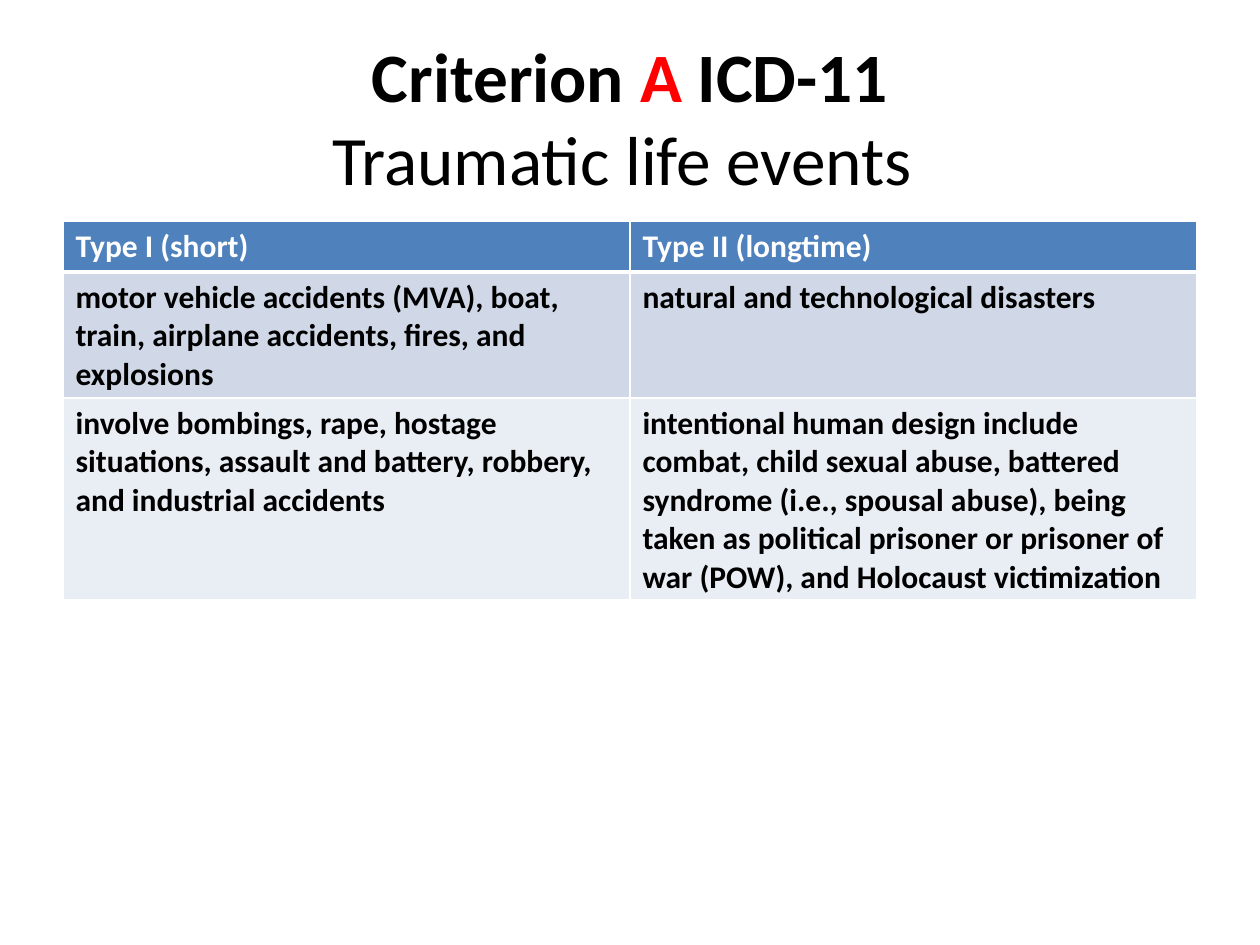
from dataclasses import dataclass

from lxml.etree import SubElement
from pptx import Presentation
from pptx.dml.color import RGBColor
from pptx.enum.text import MSO_ANCHOR, PP_ALIGN
from pptx.oxml.ns import qn
from pptx.util import Emu, Pt

EMU_PER_PX = 914400 // 126


@dataclass(frozen=True)
class Theme:
    font: str = "Calibri"
    title_size: float = 39.6
    table_size: float = 18
    ink: str = "000000"
    accent: str = "FF0000"
    paper: str = "FFFFFF"
    header_fill: str = "4F81BD"
    grid_width: int = 1
    header_rule_width: int = 3


@dataclass(frozen=True)
class Span:
    text: str
    color: str
    bold: bool = True


@dataclass(frozen=True)
class EventRow:
    short: str
    longtime: str
    fill: str
    height: int
    color: str = "000000"
    bottom_rule: int = 1


THEME = Theme()

TITLE_LINES = [
    [Span("Criterion ", THEME.ink), Span("A", THEME.accent), Span(" ICD-11", THEME.ink)],
    [Span("Traumatic life events ", THEME.ink, bold=False)],
]

EVENT_ROWS = [
    EventRow("Type I (short)", "Type II (longtime)", THEME.header_fill, 51,
             THEME.paper, THEME.header_rule_width),
    EventRow("motor vehicle accidents (MVA), boat, train, airplane accidents, "
             "fires, and explosions",
             "natural and technological disasters", "D0D8E8", 126),
    EventRow("involve bombings, rape, hostage situations, assault and battery, "
             "robbery, and industrial accidents",
             "intentional human design include combat, child sexual abuse, "
             "battered syndrome (i.e., spousal abuse), being taken as political "
             "prisoner or prisoner of war (POW), and Holocaust victimization",
             "E9EDF4", 202),
]


def px(length: int) -> Emu:
    return Emu(length * EMU_PER_PX)


def style_run(run, size: float, color: str, bold: bool) -> None:
    run.font.name = THEME.font
    run.font.size = Pt(size)
    run.font.bold = bold
    run.font.color.rgb = RGBColor.from_string(color)


def draw_title(page, lines: list[list[Span]]) -> None:
    box = page.shapes.add_textbox(px(63), px(38), px(1134), px(157))
    frame = box.text_frame
    frame.word_wrap = True
    frame.vertical_anchor = MSO_ANCHOR.MIDDLE
    para = frame.paragraphs[0]
    para.alignment = PP_ALIGN.CENTER
    for index, line in enumerate(lines):
        if index:
            para.add_line_break()
        for span in line:
            run = para.add_run()
            run.text = span.text
            style_run(run, THEME.title_size, span.color, span.bold)


def add_borders(cell, top: int, bottom: int) -> None:
    """Rule all four sides of a cell; the widths are in points."""
    properties = cell._tc.get_or_add_tcPr()
    widths = {"L": THEME.grid_width, "R": THEME.grid_width, "T": top, "B": bottom}
    for position, (side, width) in enumerate(widths.items()):
        line = SubElement(properties, qn(f"a:ln{side}"), w=str(Pt(width)))
        fill = SubElement(line, qn("a:solidFill"))
        SubElement(fill, qn("a:srgbClr"), val=THEME.paper)
        properties.insert(position, line)  # borders precede the cell fill


def draw_events(page, rows: list[EventRow]) -> None:
    height = sum(row.height for row in rows)
    table = page.shapes.add_table(len(rows), 2, px(63), px(221), px(1134), px(height)).table
    top_rule = THEME.grid_width
    for index, row in enumerate(rows):
        table.rows[index].height = px(row.height)
        for column, text in enumerate((row.short, row.longtime)):
            cell = table.cell(index, column)
            cell.text_frame.text = text
            style_run(cell.text_frame.paragraphs[0].runs[0],
                      THEME.table_size, row.color, True)
            cell.fill.solid()
            cell.fill.fore_color.rgb = RGBColor.from_string(row.fill)
            add_borders(cell, top_rule, row.bottom_rule)
        top_rule = row.bottom_rule


def main() -> None:
    deck = Presentation()
    deck.slide_width, deck.slide_height = px(1260), px(945)
    page = deck.slides.add_slide(deck.slide_layouts[6])
    page.background.fill.solid()
    page.background.fill.fore_color.rgb = RGBColor.from_string(THEME.paper)
    draw_title(page, TITLE_LINES)
    draw_events(page, EVENT_ROWS)
    deck.save("out.pptx")


if __name__ == "__main__":
    main()
